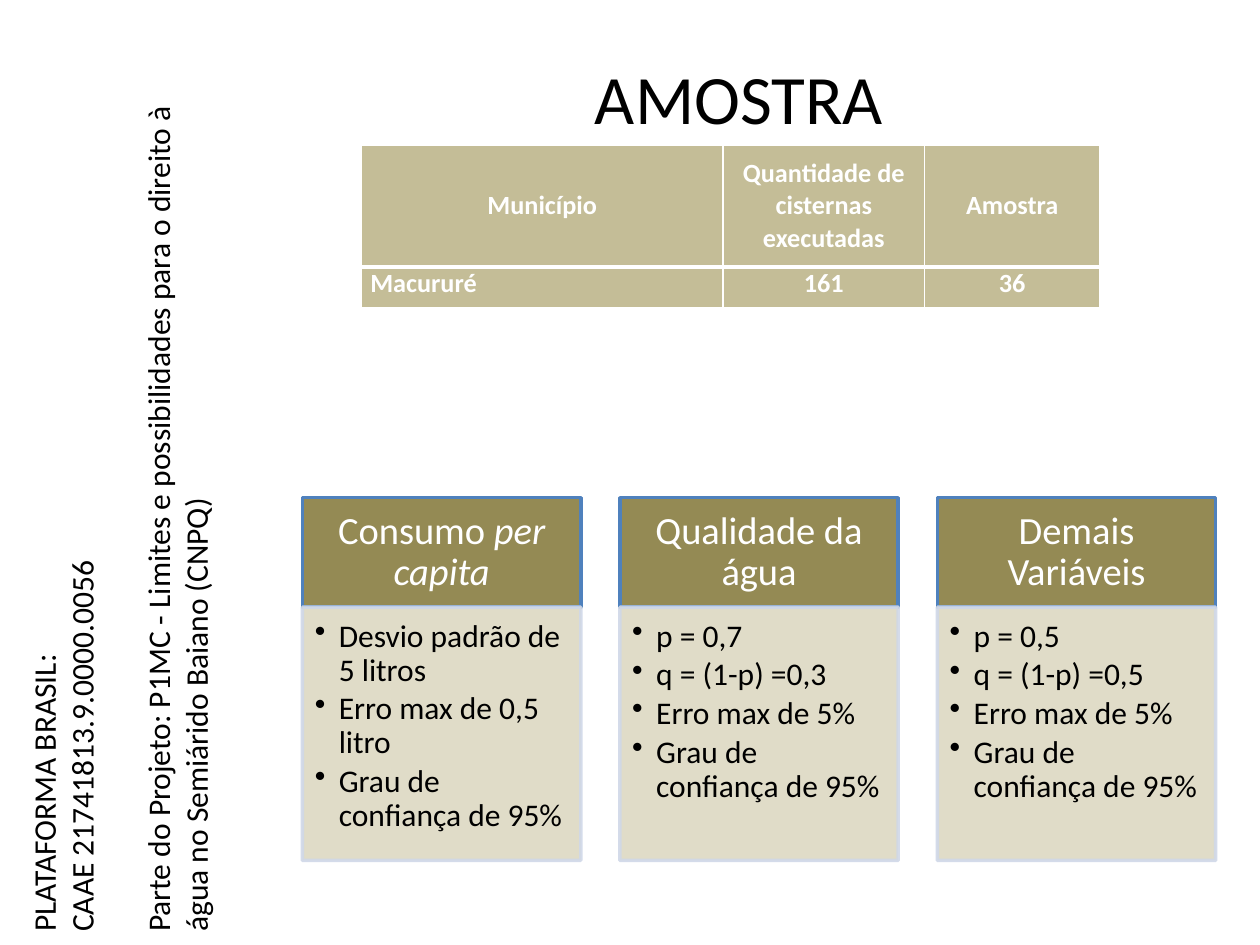
import pptx
import pptx.dml.color
import pptx.enum.shapes
import pptx.enum.text
import pptx.oxml
import pptx.oxml.ns
import pptx.util

Pt = pptx.util.Pt
RGBColor = pptx.dml.color.RGBColor
ALIGN = pptx.enum.text.PP_ALIGN
ANCHOR = pptx.enum.text.MSO_ANCHOR

TITLE = "AMOSTRA"
PROJECT_NOTE = [
    "PLATAFORMA BRASIL:",
    "CAAE 21741813.9.0000.0056",
    "Parte do Projeto: P1MC - Limites e possibilidades para o direito à água "
    "no Semiárido Baiano (CNPQ)",
]
SAMPLE_TABLE = [
    ["Município", "Quantidade de cisternas executadas", "Amostra"],
    ["Macururé", "161", "36"],
]
CONFIDENCE = "Grau de confiança de 95%"
CARDS = [
    ([("Consumo ", False), ("per capita", True)],
     ["Desvio padrão de 5 litros", "Erro max de 0,5 litro", CONFIDENCE]),
    ("Qualidade da água",
     ["p = 0,7", "q = (1-p) =0,3", "Erro max de 5%", CONFIDENCE]),
    ("Demais Variáveis",
     ["p = 0,5", "q = (1-p) =0,5", "Erro max de 5%", CONFIDENCE]),
]

FONT = "Calibri"
BLACK = RGBColor(0x00, 0x00, 0x00)
WHITE = RGBColor(0xFF, 0xFF, 0xFF)
TABLE_FILL = RGBColor(0xC4, 0xBD, 0x97)
HEADING_FILL = RGBColor(0x94, 0x8A, 0x54)
HEADING_LINE = RGBColor(0x4F, 0x81, 0xBD)
BODY_FILL = RGBColor(0xDD, 0xD9, 0xC3)
BODY_LINE = RGBColor(0xD0, 0xD8, 0xE8)

COLUMN_WIDTHS = [206.6, 115.2, 100.1]
ROW_HEIGHTS = [69.8, 23]
CARD_LEFT, CARD_TOP, CARD_WIDTH, CARD_STEP = 172.8, 284.4, 159.1, 181.4
HEADING_HEIGHT, BODY_HEIGHT = 62.6, 144.7
BULLET_INDENT = 13.7


def add_xml(parent, xml):
    namespace = pptx.oxml.ns.nsdecls("a")
    parent.append(pptx.oxml.parse_xml(xml.replace("/>", f" {namespace}/>", 1)))


def write_text(frame, paragraphs, size=18, color=BLACK, bold=False, align=ALIGN.LEFT,
               anchor=ANCHOR.TOP, margins=(7.2, 3.6, 7.2, 3.6), line_spacing=1,
               space_after=0, bullet=False):
    frame.word_wrap = True
    frame.vertical_anchor = anchor
    frame.margin_left, frame.margin_top, frame.margin_right, frame.margin_bottom = map(
        Pt, margins)
    for index, content in enumerate(paragraphs):
        paragraph = frame.add_paragraph() if index else frame.paragraphs[0]
        paragraph.alignment = align
        paragraph.line_spacing = line_spacing
        paragraph.space_after = Pt(space_after)
        if bullet:
            properties = paragraph._p.get_or_add_pPr()
            properties.set("marL", str(Pt(BULLET_INDENT)))
            properties.set("indent", str(-Pt(BULLET_INDENT)))
            add_xml(properties, '<a:buChar char="•"/>')
        for text, italic in [(content, False)] if isinstance(content, str) else content:
            run = paragraph.add_run()
            run.text = text
            run.font.name = FONT
            run.font.size = Pt(size)
            run.font.color.rgb = color
            run.font.bold = bold
            run.font.italic = italic


def add_box(slide, left, top, height, fill, line, opacity=None):
    shape = slide.shapes.add_shape(
        pptx.enum.shapes.MSO_SHAPE.RECTANGLE, Pt(left), Pt(top), Pt(CARD_WIDTH), Pt(height))
    shape.shadow.inherit = False
    shape.fill.solid()
    shape.fill.fore_color.rgb = fill
    shape.line.color.rgb = line
    shape.line.width = Pt(2)
    if opacity:
        for color in shape._element.spPr.iter(pptx.oxml.ns.qn("a:srgbClr")):
            add_xml(color, f'<a:alpha val="{opacity * 1000}"/>')
    return shape


def set_borders(cell, widths):
    properties = cell._tc.get_or_add_tcPr()
    for position, (side, width) in enumerate(widths.items()):
        border = pptx.oxml.parse_xml(
            f'<a:ln{side} {pptx.oxml.ns.nsdecls("a")} w="{Pt(width)}"><a:solidFill>'
            f'<a:srgbClr val="{WHITE}"/></a:solidFill></a:ln{side}>')
        properties.insert(position, border)


def add_sample_table(slide):
    table = slide.shapes.add_table(
        len(ROW_HEIGHTS), len(COLUMN_WIDTHS), Pt(206.6), Pt(82.8),
        Pt(sum(COLUMN_WIDTHS)), Pt(sum(ROW_HEIGHTS))).table
    for column, width in zip(table.columns, COLUMN_WIDTHS):
        column.width = Pt(width)
    for row_index, (values, height) in enumerate(zip(SAMPLE_TABLE, ROW_HEIGHTS)):
        table.rows[row_index].height = Pt(height)
        header = row_index == 0
        for column_index, value in enumerate(values):
            cell = table.cell(row_index, column_index)
            cell.fill.solid()
            cell.fill.fore_color.rgb = TABLE_FILL
            set_borders(cell, {"L": 1, "R": 1, "T": 1 if header else 3,
                               "B": 3 if header else 1})
            write_text(cell.text_frame, [value], size=15, color=WHITE, bold=True,
                       align=ALIGN.CENTER if header or column_index else ALIGN.LEFT)
            cell.vertical_anchor = ANCHOR.MIDDLE if header else ANCHOR.TOP
            cell.margin_left = cell.margin_right = Pt(5)
            cell.margin_top = cell.margin_bottom = Pt(0)


def add_project_note(slide):
    note = slide.shapes.add_textbox(Pt(-180), Pt(211), Pt(519), Pt(138.2))
    note.rotation = 270
    write_text(note.text_frame, PROJECT_NOTE)
    note.text_frame.paragraphs[-1].space_before = Pt(22)


def add_cards(slide):
    for index, (heading, items) in enumerate(CARDS):
        left = CARD_LEFT + index * CARD_STEP
        heading_box = add_box(slide, left, CARD_TOP, HEADING_HEIGHT,
                              HEADING_FILL, HEADING_LINE)
        write_text(heading_box.text_frame, [heading], size=22, color=WHITE,
                   align=ALIGN.CENTER, anchor=ANCHOR.MIDDLE,
                   margins=(12.2, 7.2, 12.2, 7.2), line_spacing=0.9)
        body_box = add_box(slide, left, CARD_TOP + HEADING_HEIGHT, BODY_HEIGHT,
                           BODY_FILL, BODY_LINE, opacity=90)
        write_text(body_box.text_frame, items, margins=(7.2, 7.2, 10, 11.5),
                   line_spacing=0.9, space_after=2.7, bullet=True)


def main():
    presentation = pptx.Presentation()
    presentation.slide_width, presentation.slide_height = Pt(720), Pt(540)
    slide = presentation.slides.add_slide(presentation.slide_layouts[5])
    title = slide.shapes.title
    title.left, title.top, title.width, title.height = Pt(320.4), Pt(37.4), Pt(203.8), Pt(31)
    write_text(title.text_frame, [TITLE], size=39.6, align=ALIGN.CENTER,
               anchor=ANCHOR.MIDDLE, margins=(7.2, 5, 7.2, 0))
    title.text_frame.auto_size = pptx.enum.text.MSO_AUTO_SIZE.NONE
    add_sample_table(slide)
    add_project_note(slide)
    add_cards(slide)
    presentation.save("out.pptx")


if __name__ == "__main__":
    main()
